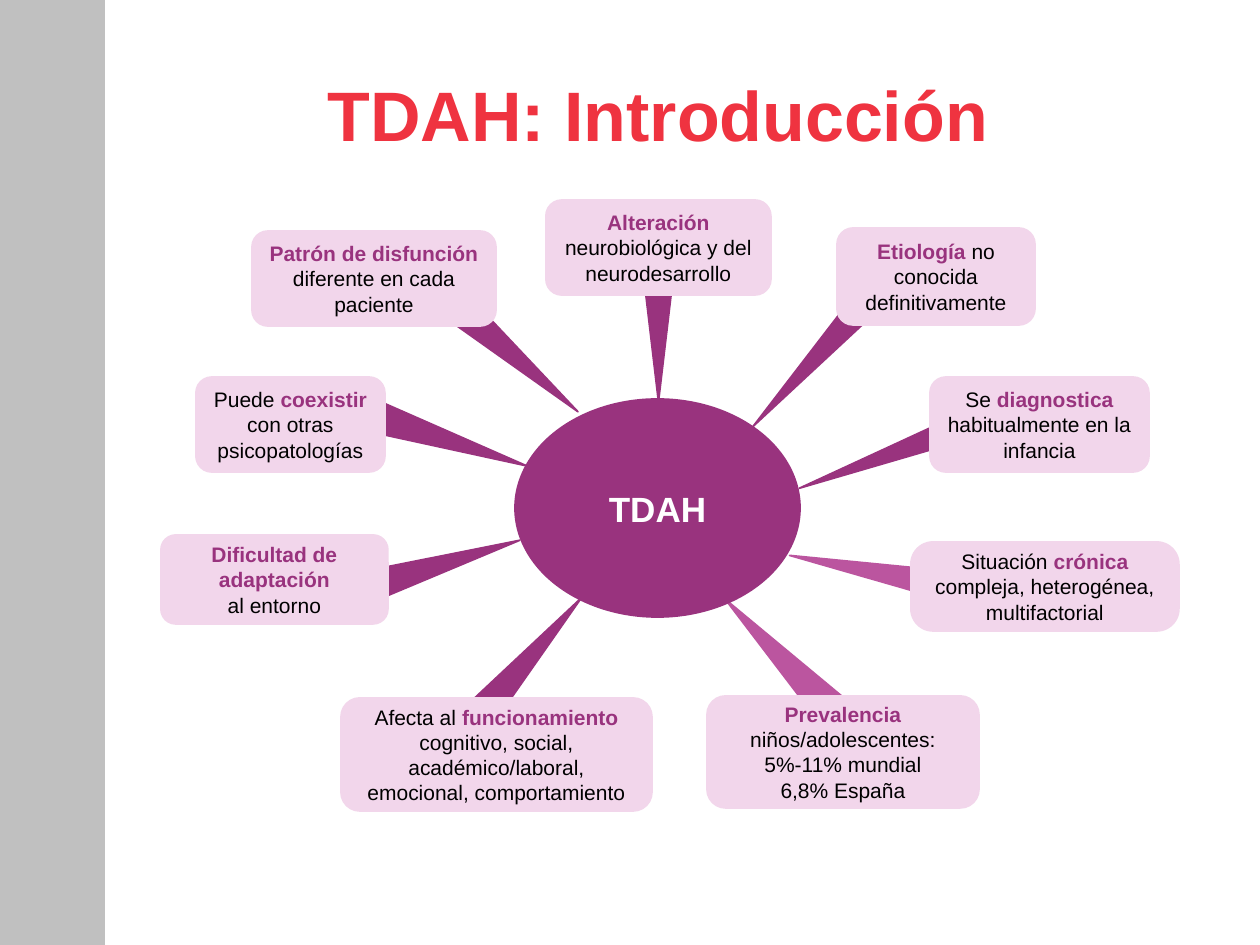
"""Build the TDAH introduction slide: a central idea with nine labelled spokes."""
import dataclasses

import pptx
import pptx.dml.color
import pptx.enum.shapes
import pptx.enum.text
import pptx.util

SHAPE = pptx.enum.shapes.MSO_SHAPE
ALIGN = pptx.enum.text.PP_ALIGN
ANCHOR = pptx.enum.text.MSO_ANCHOR
PX = 914400 // 126


@dataclasses.dataclass(frozen=True)
class Theme:
    sans: str = "Arial"
    gray: str = "C0C0C0"
    red: str = "EF3340"
    plum: str = "99337E"
    orchid: str = "BB559F"
    pink: str = "F2D6EB"
    black: str = "000000"
    white: str = "FFFFFF"
    title: int = 40
    hub: int = 20
    label: int = 12


T = Theme()

TITLE = "TDAH: Introducción"
HUB = "TDAH"

# box, paragraphs with *emphasis*, corner ratio
LABELS = [
    ((341, 698, 311, 113), ["Afecta al *funcionamiento* cognitivo, social, académico/laboral, "
                            "emocional, comportamiento"], None),
    ((546, 200, 225, 95), ["*Alteración* neurobiológica y del neurodesarrollo"], None),
    ((837, 228, 198, 97), ["*Etiología* no conocida definitivamente"], None),
    ((930, 377, 219, 95), ["Se *diagnostica* habitualmente en la infancia"], None),
    ((911, 542, 268, 89), ["Situación *crónica* compleja, heterogénea, multifactorial"], 0.25),
    ((161, 535, 227, 89), ["*Dificultad de adaptación*", "al entorno"], None),
    ((252, 231, 244, 95), ["*Patrón de disfunción* diferente en cada paciente"], None),
    ((196, 377, 189, 95), ["Puede *coexistir* con otras psicopatologías"], None),
    ((707, 696, 272, 112), ["*Prevalencia* niños/adolescentes:", "5%-11% mundial",
                            "6,8% España"], None),
]

SPOKES = [
    ((758, 581, 35, 154), 313, 0.75, T.orchid),
    ((519, 580, 30, 145), 40.9, 0.5, T.plum),
    ((508, 290, 29, 147), 131, 0.5, T.plum),
    ((432, 358, 33, 165), 108, 0.5, T.plum),
    ((436, 489, 29, 145), 73, 0.5, T.plum),
    ((853, 492, 29, 159), 280, 0.58, T.orchid),
    ((867, 378, 25, 168), 247.1, 0.78, T.plum),
    ((791, 296, 25, 150), 222.3, 0.5, T.plum),
    ((646, 296, 25, 106), 180, 0.5, T.plum),
]


def rgb(color):
    return pptx.dml.color.RGBColor.from_string(color)


def emu(box):
    return [v * PX for v in box]


def add_shape(s, kind, box, color, adj=None, rotation=0):
    sp = s.shapes.add_shape(kind, *emu(box))
    sp.shadow.inherit = False
    sp.fill.solid()
    sp.fill.fore_color.rgb = sp.line.color.rgb = rgb(color)
    sp.line.width = pptx.util.Pt(1)
    sp.rotation = rotation
    if adj is not None:
        sp.adjustments[0] = adj
    return sp


def write_centered(sp, lines, size, color, strong):
    tf = sp.text_frame
    tf.word_wrap = True
    tf.vertical_anchor = ANCHOR.MIDDLE
    for i, line in enumerate(lines):
        p = tf.add_paragraph() if i else tf.paragraphs[0]
        p.alignment = ALIGN.CENTER
        for j, part in enumerate(line.split("*")):
            if part:
                bold = j % 2 == 1
                r = p.add_run()
                r.text = part
                r.font.size = pptx.util.Pt(size)
                r.font.name = T.sans
                r.font.bold = bold
                r.font.color.rgb = rgb(strong if bold else color)


def main():
    prs = pptx.Presentation()
    prs.slide_width, prs.slide_height = emu((1260, 945))
    s = prs.slides.add_slide(prs.slide_layouts[6])
    add_shape(s, SHAPE.RECTANGLE, (0, 0, 104, 945), T.gray)
    for box, rotation, tip, color in SPOKES:
        add_shape(s, SHAPE.ISOSCELES_TRIANGLE, box, color, tip, rotation)
    title = s.shapes.add_textbox(*emu((140, 60, 1036, 106)))
    write_centered(title, [f"*{TITLE}*"], T.title, T.red, T.red)
    hub = add_shape(s, SHAPE.OVAL, (515, 399, 285, 218), T.plum)
    write_centered(hub, [f"*{HUB}*"], T.hub, T.white, T.white)
    for box, lines, corner in LABELS:
        sp = add_shape(s, SHAPE.ROUNDED_RECTANGLE, box, T.pink, corner)
        write_centered(sp, lines, T.label, T.black, T.plum)
    prs.save("out.pptx")


if __name__ == "__main__":
    main()
